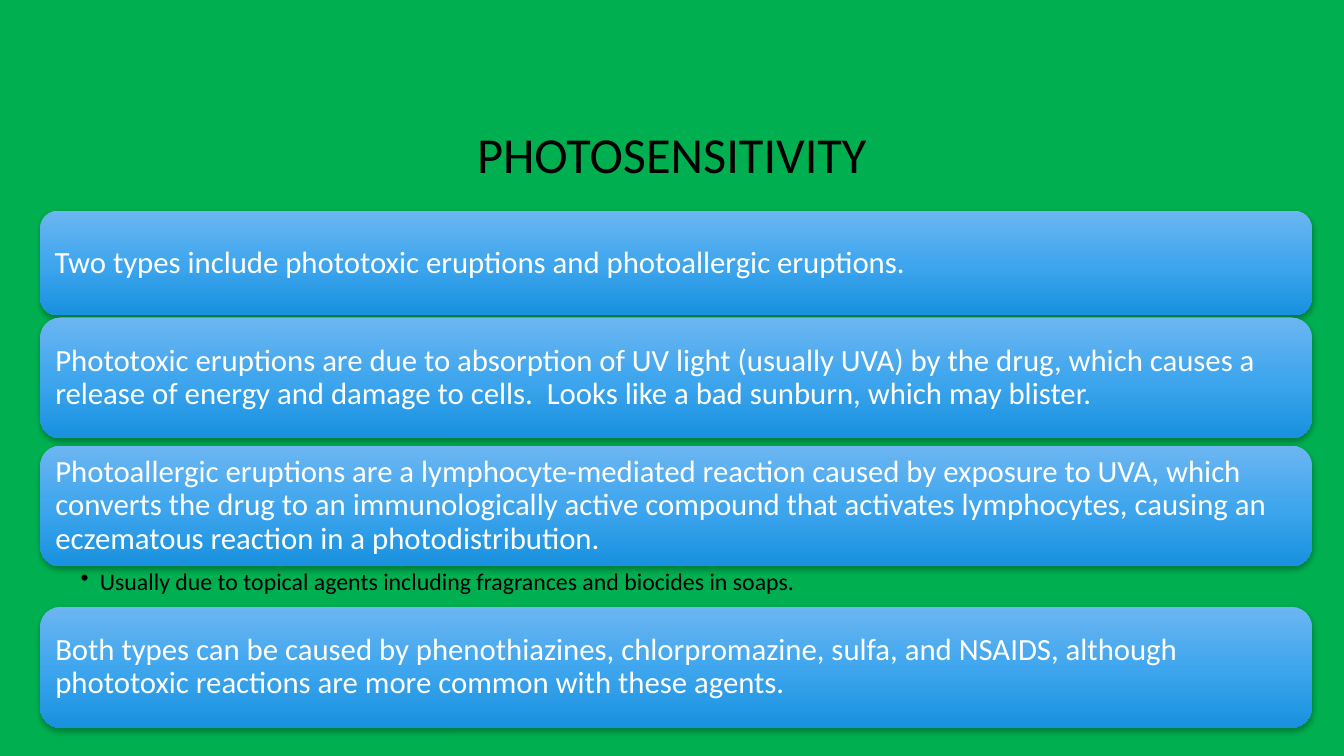
from dataclasses import dataclass

from copy import deepcopy
from lxml import etree
from pptx import Presentation
from pptx.dml.color import RGBColor
from pptx.enum.shapes import MSO_SHAPE
from pptx.enum.text import MSO_ANCHOR, PP_ALIGN
from pptx.oxml.ns import qn
from pptx.shapes.autoshape import Shape
from pptx.slide import Slide
from pptx.util import Inches, Pt

ROUNDED = MSO_SHAPE.ROUNDED_RECTANGLE
MIDDLE, TOP = MSO_ANCHOR.MIDDLE, MSO_ANCHOR.TOP
LEFT, CENTER = PP_ALIGN.LEFT, PP_ALIGN.CENTER

FONT = "Calibri"
COLORS = {
    "background": "00B050",
    "ink": "000000",
    "card_text": "FFFFFF",
    "card_top": "6CB6F1",
    "card_middle": "3FA6EE",
    "card_bottom": "1891DF",
    "shadow": "000000",
}
CARD_LEFT, CARD_WIDTH = 0.4, 12.61
CARD_INSETS = (0.09, 0.09, 0.09, 0.09)


@dataclass(frozen=True)
class Card:
    top: float
    height: float
    text: str


@dataclass(frozen=True)
class TextStyle:
    size: float
    color: str
    insets: tuple[float, float, float, float]
    anchor: MSO_ANCHOR = MIDDLE
    align: PP_ALIGN = LEFT
    bullet: str = ""


TITLE_STYLE = TextStyle(36, "ink", (0.1, 0.05, 0.1, 0.05), align=CENTER)
CARD_STYLE = TextStyle(22, "card_text", CARD_INSETS)
NOTE_STYLE = TextStyle(17, "ink", (0.4, 0.03, 0.17, 0.03), TOP, bullet="•")

CARDS = [
    Card(2.09, 1.04, "Two types include phototoxic eruptions and photoallergic eruptions."),
    Card(3.15, 1.2, "Phototoxic eruptions are due to absorption of UV light (usually UVA) "
         "by the drug, which causes a release of energy and damage to cells.  "
         "Looks like a bad sunburn, which may blister."),
    Card(4.42, 1.2, "Photoallergic eruptions are a lymphocyte-mediated reaction caused by "
         "exposure to UVA, which converts the drug to an immunologically active compound "
         "that activates lymphocytes, causing an eczematous reaction in a photodistribution."),
    Card(6.02, 1.2, "Both types can be caused by phenothiazines, chlorpromazine, sulfa, and "
         "NSAIDS, although phototoxic reactions are more common with these agents."),
]


def rgb(name: str) -> RGBColor:
    return RGBColor.from_string(COLORS[name])


def write_text(box: Shape, text: str, style: TextStyle) -> None:
    frame = box.text_frame
    frame.text = text
    frame.word_wrap = True
    frame.vertical_anchor = style.anchor
    frame.margin_left, frame.margin_top, frame.margin_right, frame.margin_bottom = map(
        Inches, style.insets)
    para = frame.paragraphs[0]
    para.alignment = style.align
    para.line_spacing = 0.9
    if style.bullet:
        properties = para._p.get_or_add_pPr()
        properties.set("marL", str(Inches(0.19)))
        properties.set("indent", str(Inches(-0.19)))
        etree.SubElement(properties, qn("a:buChar"), char=style.bullet)
    for span in para.runs:
        span.font.name = FONT
        span.font.size = Pt(style.size)
        span.font.color.rgb = rgb(style.color)


def add_text(page: Slide, left: float, top: float, width: float, height: float,
             text: str, style: TextStyle) -> None:
    box = page.shapes.add_textbox(Inches(left), Inches(top), Inches(width), Inches(height))
    write_text(box, text, style)


def fill_gradient(shape: Shape) -> None:
    shape.fill.gradient()
    shape.fill.gradient_angle = 270
    stop_list = shape._element.spPr.find(qn("a:gradFill")).find(qn("a:gsLst"))
    stop_list.insert(1, deepcopy(stop_list[0]))
    names = ("card_top", "card_middle", "card_bottom")
    for index, (stop, name) in enumerate(zip(shape.fill.gradient_stops, names)):
        stop.position = index / 2
        stop.color.rgb = rgb(name)


def add_shadow(shape: Shape) -> None:
    shape.shadow.inherit = False
    effects = shape._element.spPr.find(qn("a:effectLst"))
    shadow = etree.SubElement(effects, qn("a:outerShdw"), blurRad=str(Pt(4)),
                              dist=str(Pt(2)), dir="5400000", rotWithShape="0")
    color = etree.SubElement(shadow, qn("a:srgbClr"), val=COLORS["shadow"])
    etree.SubElement(color, qn("a:alpha"), val="28000")


def add_card(page: Slide, card: Card) -> None:
    shape = page.shapes.add_shape(ROUNDED, Inches(CARD_LEFT), Inches(card.top),
                                  Inches(CARD_WIDTH), Inches(card.height))
    fill_gradient(shape)
    shape.line.fill.background()
    add_shadow(shape)
    write_text(shape, card.text, CARD_STYLE)


def main() -> None:
    deck = Presentation()
    deck.slide_width, deck.slide_height = Inches(13.33), Inches(7.5)
    page = deck.slides.add_slide(deck.slide_layouts[6])
    page.background.fill.solid()
    page.background.fill.fore_color.rgb = rgb("background")

    add_text(page, 1, 0.68, 11.33, 1.75, "PHOTOSENSITIVITY", TITLE_STYLE)
    for card in CARDS:
        add_card(page, card)
    add_text(page, CARD_LEFT, 5.62, CARD_WIDTH, 0.4,
             "Usually due to topical agents including fragrances and biocides in soaps.",
             NOTE_STYLE)
    deck.save("out.pptx")


if __name__ == "__main__":
    main()
